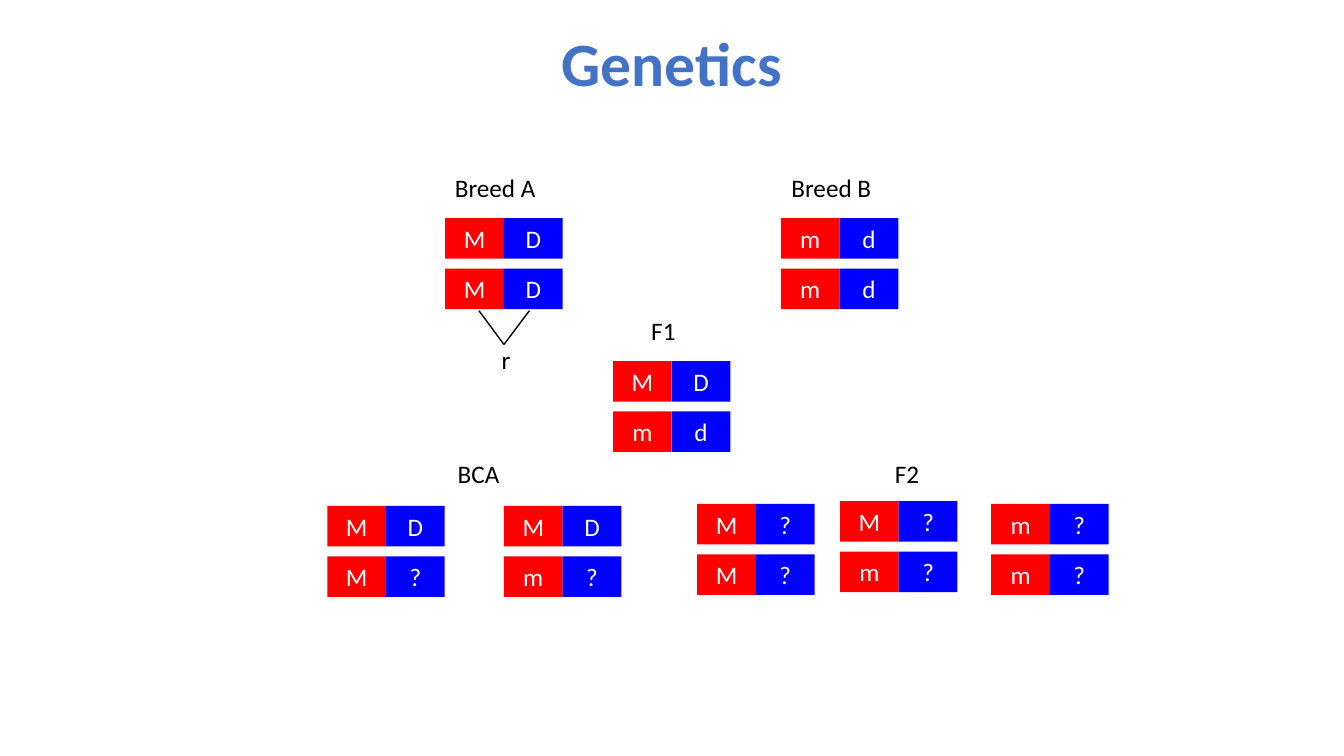
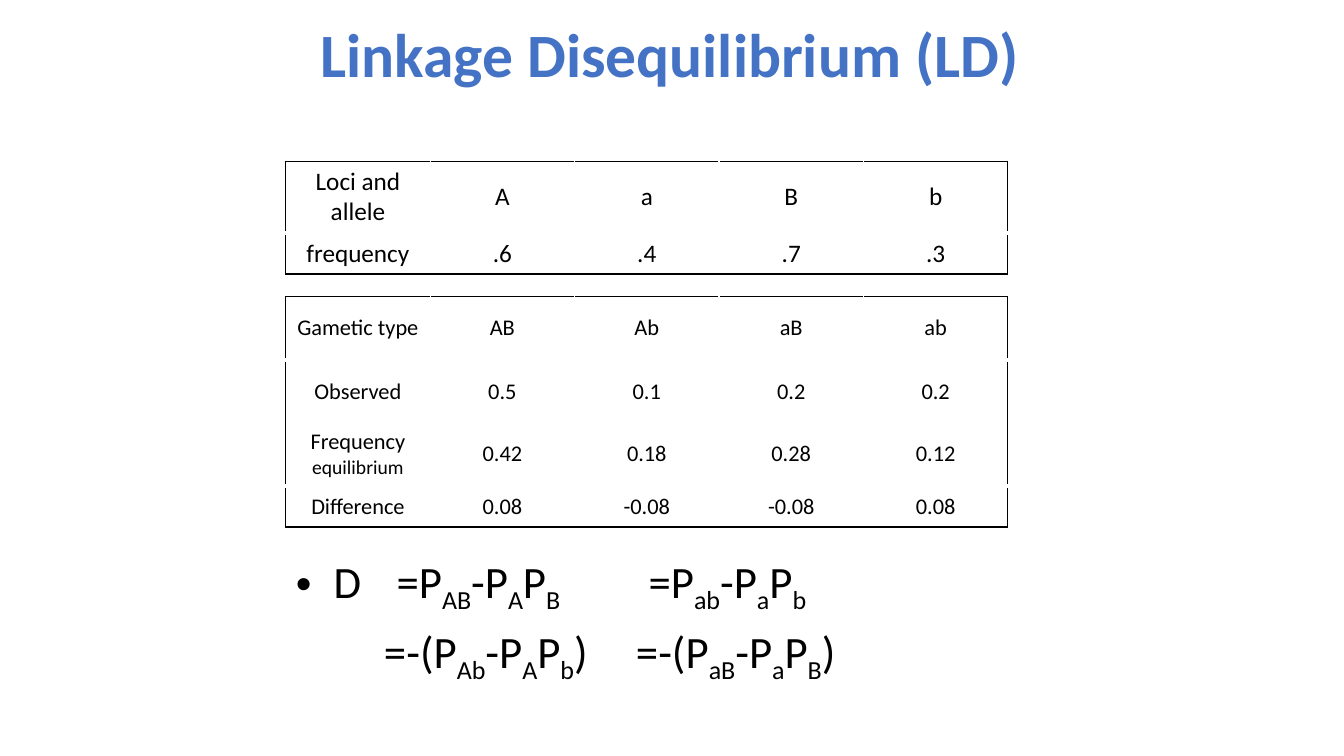
from dataclasses import dataclass

from lxml import etree
from pptx import Presentation
from pptx.dml.color import RGBColor
from pptx.enum.shapes import MSO_CONNECTOR, MSO_SHAPE
from pptx.enum.text import MSO_ANCHOR, MSO_AUTO_SIZE, PP_ALIGN
from pptx.oxml.ns import qn
from pptx.util import Cm, Pt

RECT, STRAIGHT = MSO_SHAPE.RECTANGLE, MSO_CONNECTOR.STRAIGHT
MIDDLE, CENTER = MSO_ANCHOR.MIDDLE, PP_ALIGN.CENTER
NO_FIT = MSO_AUTO_SIZE.NONE
TITLE_AND_CONTENT, TITLE_ONLY = 1, 5


@dataclass(frozen=True)
class Theme:
    font: str = "Calibri"
    title: str = "4472C4"
    ink: str = "000000"
    paper: str = "FFFFFF"
    marker: str = "FF0000"
    gene: str = "0000FF"
    title_size: int = 44
    formula_size: int = 32
    label_size: int = 18
    cell_size: int = 16
    small_size: int = 14


T = Theme()


def write(p, text, size=T.label_size, color=T.ink, bold=False, align=None, sub=False):
    """Append a formatted run to paragraph p."""
    r = p.add_run()
    r.text = text
    r.font.name, r.font.size, r.font.bold = T.font, Pt(size), bold
    r.font.color.rgb = RGBColor.from_string(color)
    if align is not None:
        p.alignment = align
    if sub:
        r._r.get_or_add_rPr().set("baseline", "-25000")


def add_slide(layout, title, left, top, width, height):
    s = prs.slides.add_slide(prs.slide_layouts[layout])
    sp = s.shapes.title
    sp.left, sp.top, sp.width, sp.height = Cm(left), Cm(top), Cm(width), Cm(height)
    tf = sp.text_frame
    tf.auto_size, tf.vertical_anchor = NO_FIT, MIDDLE
    p = tf.paragraphs[0]
    p.line_spacing = 0.9
    write(p, title, size=T.title_size, color=T.title, bold=True, align=CENTER)
    return s


prs = Presentation()
prs.slide_width, prs.slide_height = Cm(33.87), Cm(19.05)

# Genetics: each genotype is two chromosomes of a marker and a gene
s = add_slide(TITLE_ONLY, "Genetics", 5.08, 0.08, 23.71, 3.18)
BOX_W, BOX_H, ROW_STEP, LABEL_W = 1.48, 1.02, 1.27, 2.96

genotypes = [
    (11.22, 5.5, "MD", "MD"),
    (19.68, 5.5, "md", "md"),
    (15.45, 9.1, "MD", "md"),
    (8.25, 12.75, "MD", "M?"),
    (12.7, 12.75, "MD", "m?"),
    (17.57, 12.7, "M?", "M?"),
    (21.17, 12.63, "M?", "m?"),
    (24.98, 12.7, "m?", "m?"),
]
for left, top, *chromosomes in genotypes:
    for row, alleles in enumerate(chromosomes):
        for col, (allele, fill) in enumerate(zip(alleles, (T.marker, T.gene))):
            sp = s.shapes.add_shape(RECT, Cm(left + col * BOX_W), Cm(top + row * ROW_STEP),
                                    Cm(BOX_W), Cm(BOX_H))
            sp.shadow.inherit = False
            sp.fill.solid()
            sp.fill.fore_color.rgb = RGBColor.from_string(fill)
            sp.line.fill.background()
            sp.text_frame.vertical_anchor = MIDDLE
            write(sp.text_frame.paragraphs[0], allele, color=T.paper, align=CENTER)

labels = [("Breed A", 11.0, 4.23), ("Breed B", 19.47, 4.23), ("F1", 15.24, 7.83),
          ("BCA", 10.58, 11.43), ("F2", 21.38, 11.43), ("r", 11.27, 8.56)]
for text, left, top in labels:
    tf = s.shapes.add_textbox(Cm(left), Cm(top), Cm(LABEL_W), Cm(BOX_H)).text_frame
    tf.word_wrap = True
    write(tf.paragraphs[0], text, align=CENTER)

for start in (12.07, 13.34):
    line = s.shapes.add_connector(STRAIGHT, Cm(start), Cm(7.83), Cm(12.7), Cm(8.68))
    line.line.color.rgb = RGBColor.from_string(T.ink)
    line.line.width = Pt(1)
    etree.SubElement(line._element.spPr, qn("a:effectLst"))

# Linkage disequilibrium
s = add_slide(TITLE_AND_CONTENT, "Linkage Disequilibrium (LD)", 5.46, 0, 22.86, 2.9)
LEFT, COL_W, COLS = 7.2, 3.64, 5

# top, row heights, type size, sides left without a black edge, rows
tables = [
    (4.06, (1.78, 1.04), T.label_size, "",
     [("Loci and allele", "A", "a", "B", "b"),
      ("frequency", ".6", ".4", ".7", ".3")]),
    (7.47, (1.6, 1.6), T.cell_size, "B",
     [("Gametic type", "AB", "Ab", "aB", "ab"),
      ("Observed", "0.5", "0.1", "0.2", "0.2")]),
    (10.64, (1.6, 1.04), T.cell_size, "T",
     [("Frequency |equilibrium", "0.42", "0.18", "0.28", "0.12"),
      ("Difference", "0.08", "-0.08", "-0.08", "0.08")]),
]
for top, heights, size, open_sides, rows in tables:
    table = s.shapes.add_table(len(rows), COLS, Cm(LEFT), Cm(top),
                               Cm(COLS * COL_W), Cm(sum(heights))).table
    table.first_row = table.horz_banding = False
    for column in table.columns:
        column.width = Cm(COL_W)
    for i, row in enumerate(rows):
        table.rows[i].height = Cm(heights[i])
        for j, text in enumerate(row):
            cell = table.cell(i, j)
            cell.fill.background()
            cell.vertical_anchor = MIDDLE
            p = cell.text_frame.paragraphs[0]
            main, _, small = text.partition("|")
            write(p, main, size=size, align=CENTER)
            if small:
                write(p, small, size=T.small_size)
            outer = {"L": j == 0, "R": j == COLS - 1,
                     "T": i == 0, "B": i == len(rows) - 1}
            for n, (side, is_outer) in enumerate(outer.items()):
                black = is_outer and side not in open_sides
                width = Pt(3) if side == "B" and not is_outer else Pt(1)
                ln = etree.Element(qn(f"a:ln{side}"), w=str(width))
                fill = etree.SubElement(ln, qn("a:solidFill"))
                etree.SubElement(fill, qn("a:srgbClr"), val=T.ink if black else T.paper)
                cell._tc.get_or_add_tcPr().insert(n, ln)

# Every second part between bars is a subscript
formulas = ["D\t=P|AB|-P|A|P|B\t\t|=P|ab|-P|a|P|b",
            "\t\t=-(P|Ab|-P|A|P|b|) \t=-(P|aB|-P|a|P|B|)"]
sp = s.placeholders[1]
sp.left, sp.top, sp.width, sp.height = Cm(LEFT), Cm(13.82), Cm(COLS * COL_W), Cm(3.81)
tf = sp.text_frame
tf.auto_size = NO_FIT
for i, formula in enumerate(formulas):
    p = tf.add_paragraph() if i else tf.paragraphs[0]
    if i:
        etree.SubElement(p._p.get_or_add_pPr(), qn("a:buNone"))
    for n, part in enumerate(formula.split("|")):
        write(p, part, size=T.formula_size, sub=n % 2 == 1)

prs.save("out.pptx")
